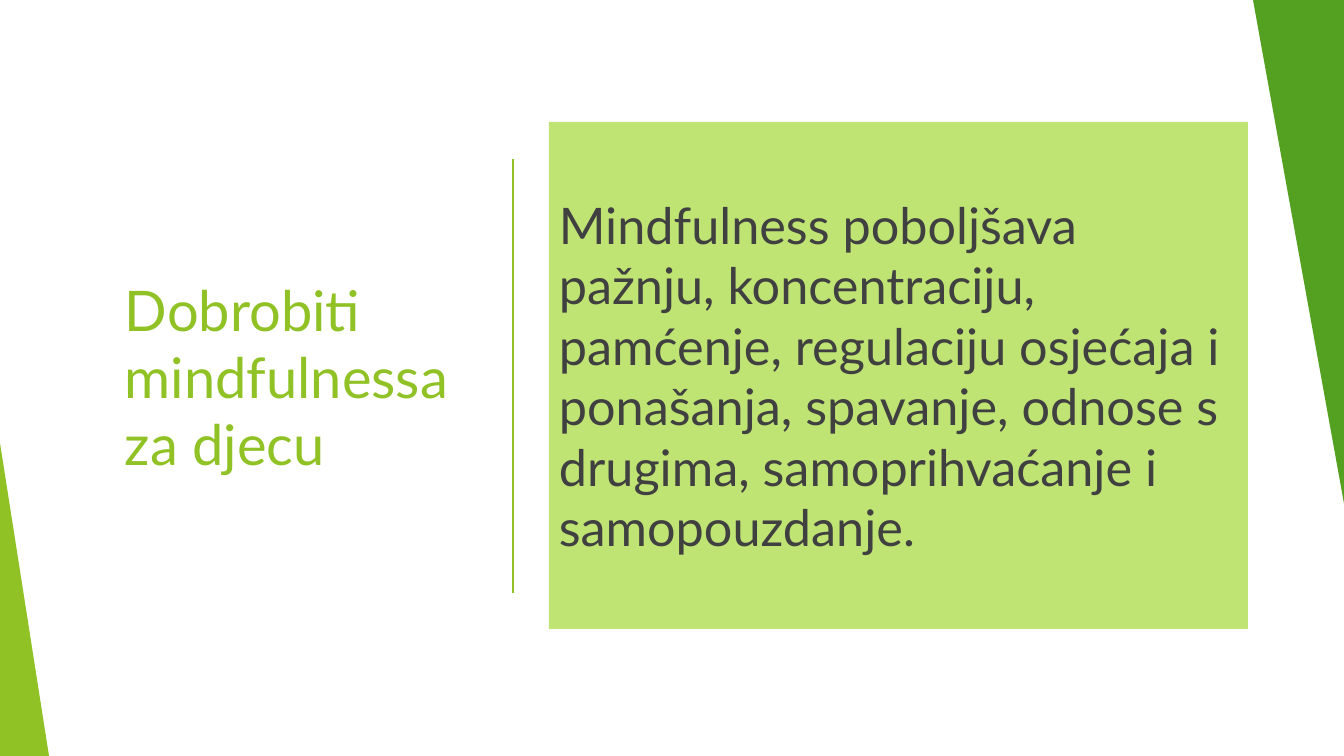
import pptx
import pptx.dml.color
import pptx.enum.shapes
import pptx.enum.text
import pptx.oxml.ns
import pptx.util
from lxml import etree

WIDTH, HEIGHT = 1344, 756
LIME, GREEN, PALE, GREY = "90C226", "54A021", "C0E474", "404040"


def px(length):
    return pptx.util.Emu(round(length * 12192000 / WIDTH))


def color(value):
    return pptx.dml.color.RGBColor.from_string(value)


class SlideBuilder:
    font_name = "Lato"

    def __init__(self, presentation):
        self.slide = presentation.slides.add_slide(presentation.slide_layouts[6])

    def background(self, fill):
        background_fill = self.slide.background.fill
        background_fill.solid()
        background_fill.fore_color.rgb = color(fill)

    def shape(self, kind, left, top, width, height, fill):
        shape = self.slide.shapes.add_shape(kind, px(left), px(top), px(width), px(height))
        shape.shadow.inherit = False
        shape.fill.solid()
        shape.fill.fore_color.rgb = color(fill)
        shape.line.fill.background()
        return shape

    def wedge(self, left, top, width, height, fill, rotation=0):
        kind = pptx.enum.shapes.MSO_SHAPE.ISOSCELES_TRIANGLE
        shape = self.shape(kind, left, top, width, height, fill)
        shape.adjustments[0] = 0
        shape.rotation = rotation

    def panel(self, left, top, width, height, fill, text, size, text_color, space_before=0):
        kind = pptx.enum.shapes.MSO_SHAPE.RECTANGLE
        frame = self.shape(kind, left, top, width, height, fill).text_frame
        frame.word_wrap = True
        frame.vertical_anchor = pptx.enum.text.MSO_ANCHOR.MIDDLE
        paragraph = frame.paragraphs[0]
        paragraph.text = text
        paragraph.alignment = pptx.enum.text.PP_ALIGN.LEFT
        paragraph.space_before = pptx.util.Pt(space_before)
        paragraph.font.name = self.font_name
        paragraph.font.size = pptx.util.Pt(size)
        paragraph.font.color.rgb = color(text_color)

    def divider(self, left, top, bottom, line_color, weight):
        kind = pptx.enum.shapes.MSO_CONNECTOR.STRAIGHT
        line = self.slide.shapes.add_connector(kind, px(left), px(top), px(left), px(bottom))
        line.line.color.rgb = color(line_color)
        line.line.width = pptx.util.Pt(weight)
        etree.SubElement(line._element.spPr, pptx.oxml.ns.qn("a:effectLst"))


def main():
    presentation = pptx.Presentation()
    presentation.slide_width = px(WIDTH)
    presentation.slide_height = px(HEIGHT)

    builder = SlideBuilder(presentation)
    builder.background("FFFFFF")
    builder.panel(115, 130, 364, 492, "FFFFFF", "Dobrobiti mindfulnessa za djecu", 40, LIME)
    builder.wedge(0, 443, 49, 313, LIME)
    builder.divider(513, 159, 593, LIME, 1)
    builder.panel(
        549, 122, 699, 507, PALE,
        "Mindfulness poboljšava pažnju, koncentraciju, pamćenje, regulaciju osjećaja i "
        "ponašanja, spavanje, odnose s drugima, samoprihvaćanje i samopouzdanje.",
        36, GREY, space_before=10,
    )
    builder.wedge(1253, 0, 92, 509, GREEN, rotation=180)
    presentation.save("out.pptx")


if __name__ == "__main__":
    main()
